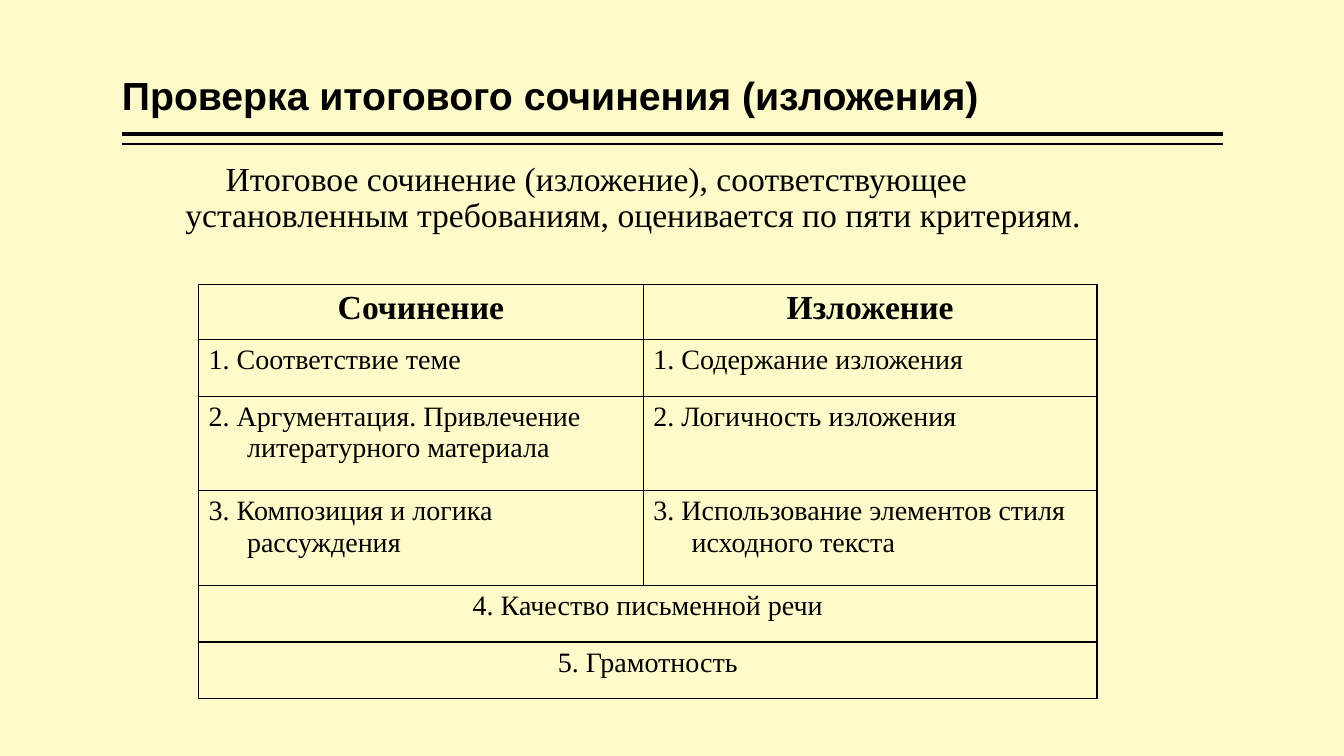
from lxml import etree
from pptx import Presentation
from pptx import util as u
from pptx.dml.color import RGBColor
from pptx.enum import text
from pptx.oxml.ns import qn

INK, PAPER = "000000", "FEFAC9"
SERIF, SANS = "Times New Roman", "Arial"
LEFT, WIDTH = 1.21, 10.92

HEADS = ("Сочинение", "Изложение")
CRITERIA = (
    ("1. Соответствие теме", "1. Содержание изложения"),
    ("2. Аргументация. Привлечение литературного материала",
     "2. Логичность изложения"),
    ("3. Композиция и логика рассуждения",
     "3. Использование элементов стиля исходного текста"),
    ("4. Качество письменной речи",),
    ("5. Грамотность",),
)
COLUMNS = (4.41, 4.5)
ROWS = (0.55, 0.56, 0.94, 0.94, 0.56, 0.56)


def color(value):
    return RGBColor.from_string(value)


def inches(*values):
    return [u.Inches(v) for v in values]


def style(p, size, font=SERIF, bold=False, align=text.PP_ALIGN.LEFT,
          margin=0, indent=0):
    pPr = p._p.get_or_add_pPr()
    pPr.set("marL", str(u.Inches(margin)))
    pPr.set("indent", str(u.Inches(indent)))
    p.alignment = align
    p.font.size, p.font.name, p.font.bold = u.Pt(size), font, bold
    p.font.color.rgb = color(INK)


def add_rule(s, x, y, width, weight):
    line = s.shapes.add_connector(1, *inches(x, y, x + width, y))
    line.line.color.rgb = color(INK)
    line.line.width = u.Pt(weight)
    etree.SubElement(line._element.spPr, qn("a:effectLst"))


def add_heading(s, x, y, width, height):
    title = s.shapes.title
    title.left, title.top, title.width, title.height = inches(x, y, width, height)
    tf = title.text_frame
    tf.text = "Проверка итогового сочинения (изложения)"
    tf.word_wrap = True
    tf.auto_size = text.MSO_AUTO_SIZE.NONE
    tf.vertical_anchor = text.MSO_ANCHOR.BOTTOM
    tf.margin_left = tf.margin_right = 0
    p = tf.paragraphs[0]
    p.line_spacing = 0.9
    style(p, 28, SANS, bold=True)
    # Double rule under the title
    for gap, weight in ((0.1, 3), (0.2, 1)):
        add_rule(s, x, y + height + gap, width, weight)


def add_intro(s, x, y, width, height):
    tf = s.shapes.add_textbox(*inches(x, y, width, height)).text_frame
    tf.word_wrap = True
    p = tf.paragraphs[0]
    p.text = ("Итоговое сочинение (изложение), соответствующее "
              "установленным требованиям, оценивается по пяти критериям.")
    p.line_spacing = 0.9
    style(p, 24, indent=0.4)


def outline(cell):
    tcPr = cell._tc.get_or_add_tcPr()
    for index, side in enumerate(("lnL", "lnR", "lnT", "lnB")):
        ln = etree.Element(qn(f"a:{side}"), w=str(u.Pt(1)))
        fill = etree.SubElement(ln, qn("a:solidFill"))
        etree.SubElement(fill, qn("a:srgbClr"), val=INK)
        tcPr.insert(index, ln)


def add_criteria(s, x, y):
    frame = s.shapes.add_table(len(ROWS), len(COLUMNS),
                               *inches(x, y, sum(COLUMNS), sum(ROWS)))
    table = frame.table
    table.horz_banding = table.first_row = False
    for column, width in zip(table.columns, COLUMNS):
        column.width = u.Inches(width)
    for row, height in zip(table.rows, ROWS):
        row.height = u.Inches(height)
    for cell in table.iter_cells():
        cell.fill.background()
        outline(cell)

    for r, labels in enumerate((HEADS,) + CRITERIA):
        shared = len(labels) == 1
        if shared:
            table.cell(r, 0).merge(table.cell(r, 1))
        for c, label in enumerate(labels):
            p = table.cell(r, c).text_frame.paragraphs[0]
            p.text = label
            if r == 0:
                style(p, 24, bold=True, align=text.PP_ALIGN.CENTER)
            else:
                align = text.PP_ALIGN.CENTER if shared else text.PP_ALIGN.LEFT
                style(p, 20, align=align, margin=0.38, indent=-0.38)


def main():
    prs = Presentation()
    prs.slide_width, prs.slide_height = inches(13.33, 7.5)
    s = prs.slides.add_slide(prs.slide_layouts[5])
    s.background.fill.solid()
    s.background.fill.fore_color.rgb = color(PAPER)
    add_heading(s, LEFT, 0.08, WIDTH, 1.15)
    add_intro(s, 1.74, 1.56, 9.21, 1.02)
    add_criteria(s, 1.97, 2.82)
    prs.save("out.pptx")


if __name__ == "__main__":
    main()
